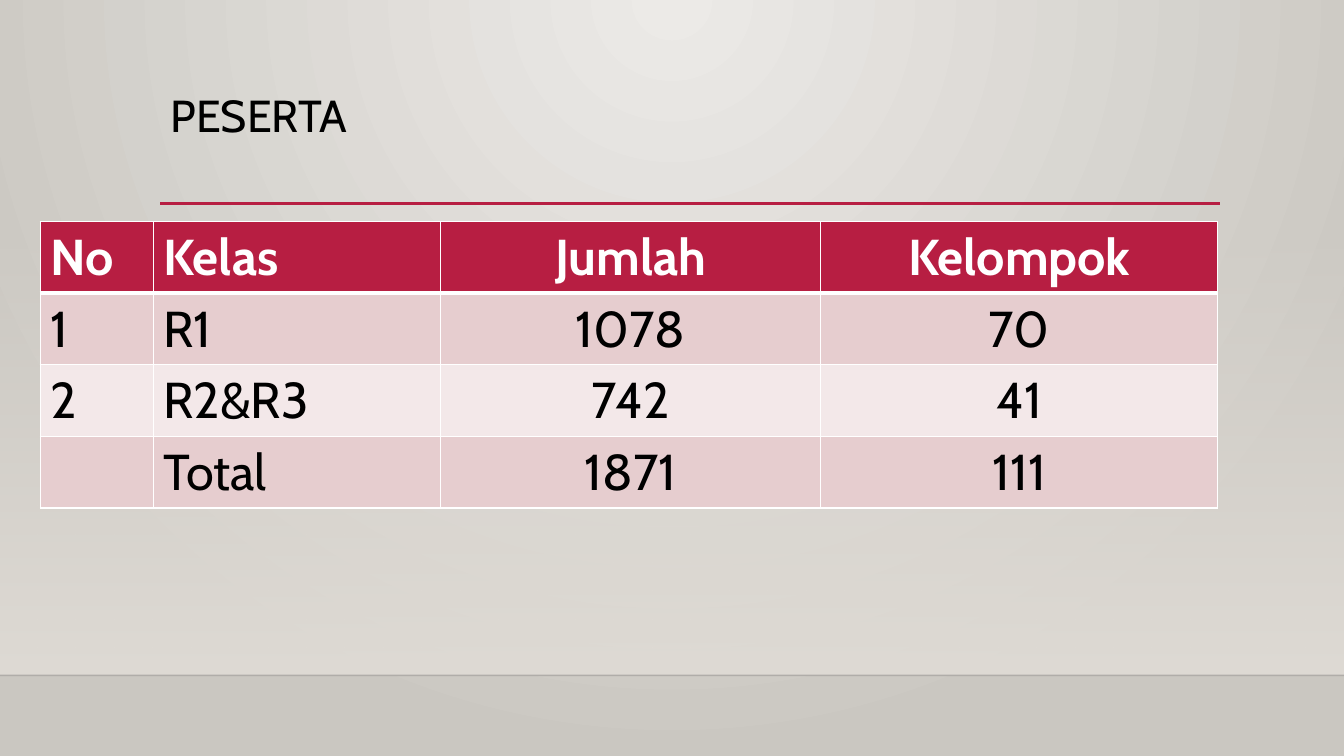
from pptx import Presentation
from pptx.dml.color import RGBColor
from pptx.enum.shapes import MSO_CONNECTOR, MSO_SHAPE
from pptx.enum.text import MSO_ANCHOR, MSO_AUTO_SIZE, PP_ALIGN
from pptx.oxml import parse_xml
from pptx.oxml.ns import nsdecls, qn
from pptx.util import Inches, Pt

CRIMSON, WHITE, BLACK = "B71E42", "FFFFFF", "000000"
BAND_FILLS = ["E6CDCF", "F3E8E9"]


def set_text(frame, text, size, color=BLACK, bold=False, align=PP_ALIGN.LEFT, spacing=1.0):
    paragraph = frame.paragraphs[0]
    paragraph.alignment = align
    paragraph.line_spacing = spacing
    run = paragraph.add_run()
    run.text = text
    run.font.name = "Cabin"
    run.font.size = Pt(size)
    run.font.bold = bold
    run.font.color.rgb = RGBColor.from_string(color)


def set_gradient(properties, stops, direction):
    """Replace a solid fill by stops of (percent, colour, opacity percent)."""
    stop_xml = "".join(
        f'<a:gs pos="{pos * 1000}"><a:srgbClr val="{color}">'
        f'<a:alpha val="{opacity * 1000}"/></a:srgbClr></a:gs>'
        for pos, color, opacity in stops)
    gradient = parse_xml(f'<a:gradFill {nsdecls("a")} rotWithShape="1">'
                         f"<a:gsLst>{stop_xml}</a:gsLst>{direction}</a:gradFill>")
    properties.replace(properties.find(qn("a:solidFill")), gradient)


prs = Presentation()
prs.slide_width, prs.slide_height = Inches(13.33), Inches(7.5)
slide = prs.slides.add_slide(prs.slide_layouts[5])
shapes = slide.shapes

# Backdrop
slide.background.fill.solid()
set_gradient(slide.element.find(".//" + qn("p:bgPr")),
             [(0, "ECEAE7", 100), (100, "CAC7C1", 100)],
             '<a:path path="circle"><a:fillToRect l="43000" t="0" r="43000" b="100000"/></a:path>')

wall = shapes.add_shape(MSO_SHAPE.RECTANGLE, 0, Inches(2.21), Inches(13.33), Inches(4.49))
wall.shadow.inherit = False
wall.line.fill.background()
wall.fill.solid()
set_gradient(wall.element.spPr, [(0, "DFDBD5", 0), (100, "DFDBD5", 100)],
             '<a:lin ang="5400000" scaled="0"/>')

# Floor edge and title rule
for left, right, y, color, width, opacity in [
    (0, 13.33, 6.7, "000001", 1, 20),
    (1.59, 12.1, 2.02, CRIMSON, 2.5, 100),
]:
    rule = shapes.add_connector(MSO_CONNECTOR.STRAIGHT, Inches(left), Inches(y),
                                Inches(right), Inches(y))
    rule.line.color.rgb = RGBColor.from_string(color)
    rule.line.width = Pt(width)
    rule_properties = rule.element.spPr
    rule_properties.find(".//" + qn("a:srgbClr")).append(
        parse_xml(f'<a:alpha {nsdecls("a")} val="{opacity * 1000}"/>'))
    rule_properties.append(parse_xml(f'<a:effectLst {nsdecls("a")}/>'))

# Title
title = shapes.title
title.left, title.top = Inches(1.59), Inches(0.88)
title.width, title.height = Inches(10.5), Inches(1.15)
title.text_frame.vertical_anchor = MSO_ANCHOR.TOP
title.text_frame.auto_size = MSO_AUTO_SIZE.NONE
set_text(title.text_frame, "PESERTA", 32, spacing=0.9)

# Participants
participants = [
    ["No", "Kelas", "Jumlah", "Kelompok"],
    ["1", "R1", "1078", "70"],
    ["2", "R2&R3", "742", "41"],
    ["", "Total", "1871", "111"],
]
column_widths = [1.12, 2.85, 3.77, 3.94]
row_height = 0.71
table = shapes.add_table(len(participants), len(column_widths), Inches(0.4), Inches(2.2),
                         Inches(sum(column_widths)),
                         Inches(row_height * len(participants))).table
for column, width in zip(table.columns, column_widths):
    column.width = Inches(width)

for r, values in enumerate(participants):
    table.rows[r].height = Inches(row_height)
    header = r == 0
    for c, value in enumerate(values):
        cell = table.cell(r, c)
        cell_properties = cell._tc.get_or_add_tcPr()
        for side in "LRTB":
            under_header = (r, side) in [(0, "B"), (1, "T")]
            cell_properties.append(parse_xml(
                f'<a:ln{side} {nsdecls("a")} w="{Pt(3 if under_header else 1)}">'
                f'<a:solidFill><a:srgbClr val="{WHITE}"/></a:solidFill></a:ln{side}>'))
        cell.fill.solid()
        cell.fill.fore_color.rgb = RGBColor.from_string(
            CRIMSON if header else BAND_FILLS[(r - 1) % 2])
        if value:
            set_text(cell.text_frame, value, 36, color=WHITE if header else BLACK, bold=header,
                     align=PP_ALIGN.CENTER if c >= 2 else PP_ALIGN.LEFT)

prs.save("out.pptx")
